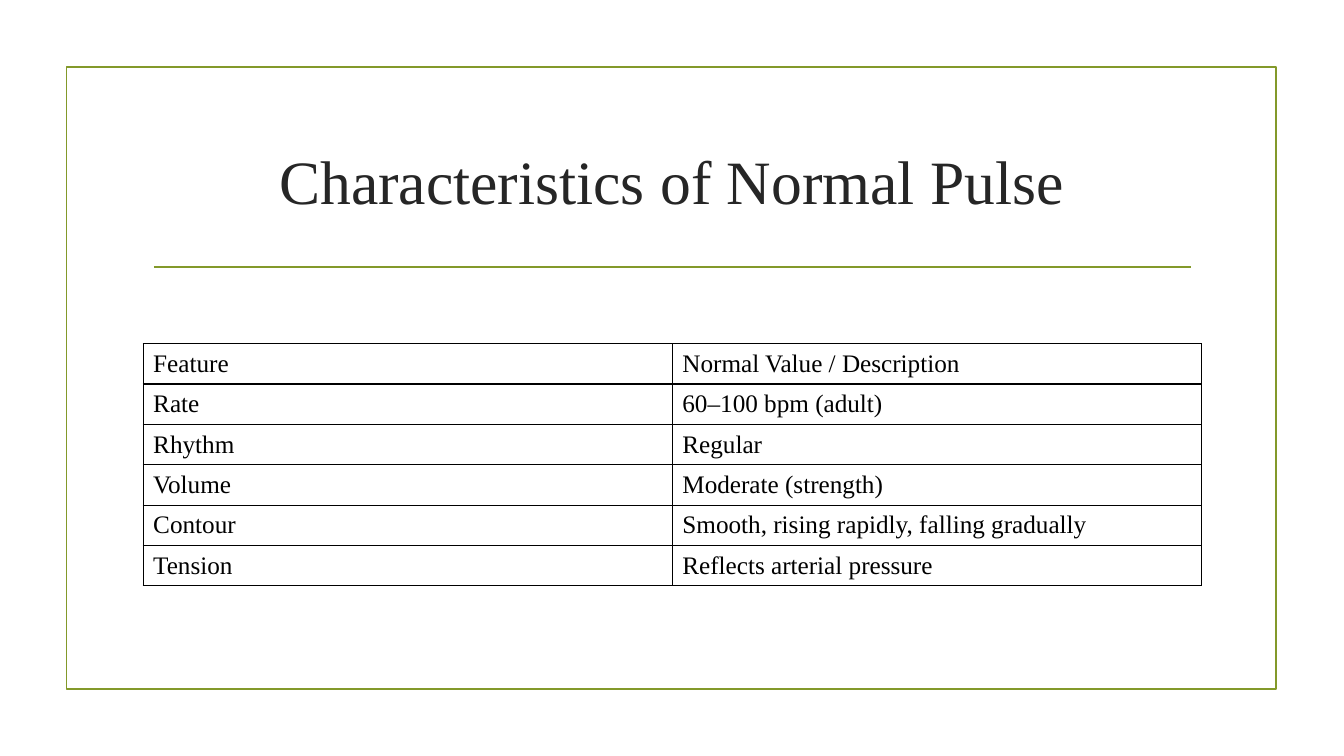
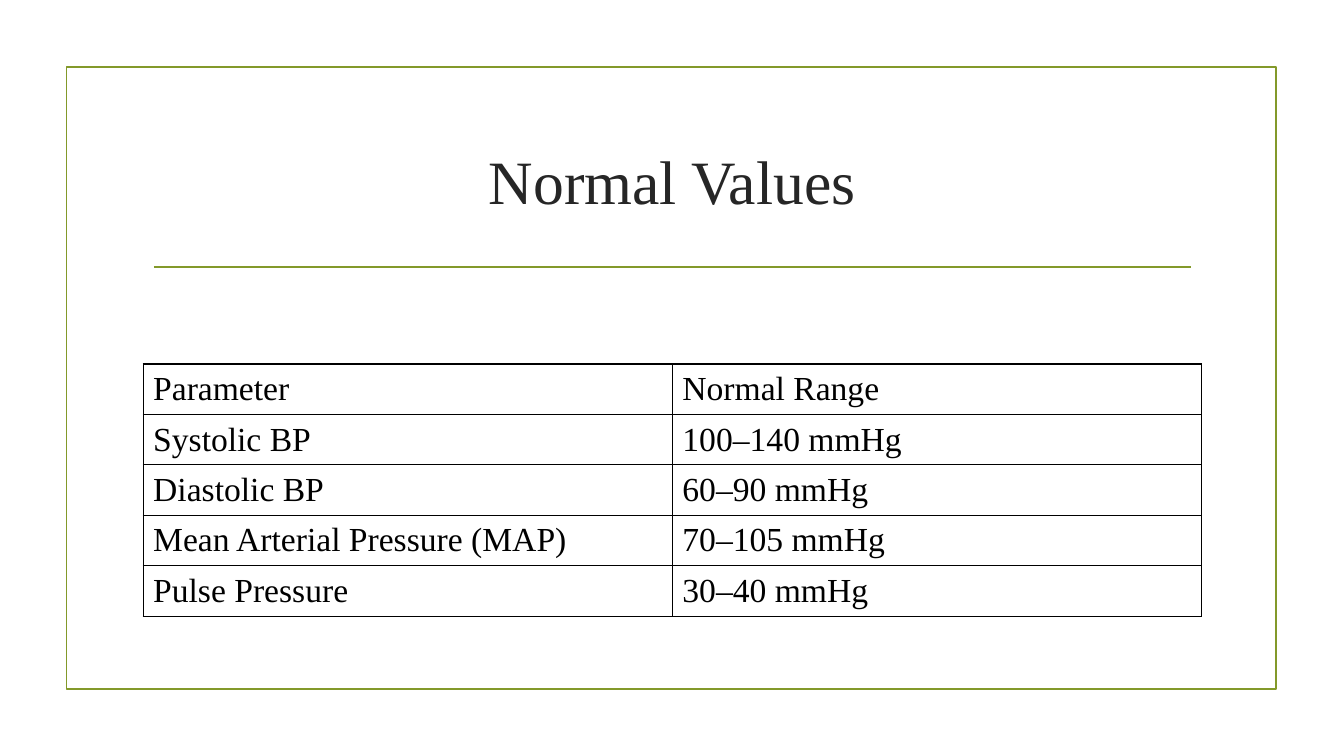
from dataclasses import dataclass

from lxml import etree
from pptx import Presentation
from pptx.dml.color import RGBColor
from pptx.enum.shapes import MSO_CONNECTOR, MSO_SHAPE
from pptx.enum.text import MSO_ANCHOR, PP_ALIGN
from pptx.oxml.ns import qn
from pptx.slide import Slide
from pptx.table import _Cell
from pptx.text.text import TextFrame
from pptx.util import Pt

RECTANGLE = MSO_SHAPE.RECTANGLE
STRAIGHT = MSO_CONNECTOR.STRAIGHT
MIDDLE = MSO_ANCHOR.MIDDLE
CENTER = PP_ALIGN.CENTER
LEFT = PP_ALIGN.LEFT

COLORS = {"accent": "83992A", "title": "262626", "ink": "000000", "paper": "FFFFFF"}
FONT = "Times New Roman"
BLANK_LAYOUT = 6
SLIDE_WIDTH, SLIDE_HEIGHT = 960, 540
CONTENT_LEFT, CONTENT_WIDTH = 102.24, 756
ACCENT_WEIGHT = 1.25
BORDER_WEIGHT = 1


@dataclass(frozen=True)
class ValuesSlide:
    title: str
    table_top: float
    row_height: float
    text_size: float
    rows: tuple[tuple[str, ...], ...]


SLIDES = (
    ValuesSlide(
        "Characteristics of Normal Pulse", 245.5, 27.2, 18,
        (
            ("Feature", "Normal Value / Description"),
            ("Rate", "60–100 bpm (adult)"),
            ("Rhythm", "Regular"),
            ("Volume", "Moderate (strength)"),
            ("Contour", "Smooth, rising rapidly, falling gradually"),
            ("Tension", "Reflects arterial pressure"),
        ),
    ),
    ValuesSlide(
        "Normal Values", 260, 33.85, 24,
        (
            ("Parameter", "Normal Range"),
            ("Systolic BP", "100–140 mmHg"),
            ("Diastolic BP", "60–90 mmHg"),
            ("Mean Arterial Pressure (MAP)", "70–105 mmHg"),
            ("Pulse Pressure", "30–40 mmHg"),
        ),
    ),
)


def rgb(name: str) -> RGBColor:
    return RGBColor.from_string(COLORS[name])


def write(frame: TextFrame, text: str, size: float, color: str, align: PP_ALIGN) -> None:
    paragraph = frame.paragraphs[0]
    paragraph.alignment = align
    run = paragraph.add_run()
    run.text = text
    run.font.name = FONT
    run.font.size = Pt(size)
    run.font.color.rgb = rgb(color)


def add_frame_and_rule(slide: Slide) -> None:
    background = slide.background.fill
    background.solid()
    background.fore_color.rgb = rgb("paper")
    border = slide.shapes.add_shape(RECTANGLE, Pt(47.5), Pt(48), Pt(864), Pt(444))
    border.shadow.inherit = False
    border.fill.background()
    rule = slide.shapes.add_connector(STRAIGHT, Pt(110), Pt(190.8), Pt(850.5), Pt(190.8))
    etree.SubElement(rule._element.spPr, qn("a:effectLst"))
    for outlined in (border, rule):
        outlined.line.color.rgb = rgb("accent")
        outlined.line.width = Pt(ACCENT_WEIGHT)


def add_title(slide: Slide, text: str) -> None:
    title = slide.shapes.add_textbox(Pt(CONTENT_LEFT), Pt(77), Pt(CONTENT_WIDTH), Pt(103))
    title.text_frame.word_wrap = True
    title.text_frame.vertical_anchor = MIDDLE
    write(title.text_frame, text, 44, "title", CENTER)


def add_borders(cell: _Cell) -> None:
    properties = cell._tc.get_or_add_tcPr()
    for position, side in enumerate(("lnL", "lnR", "lnT", "lnB")):
        edge = etree.Element(qn(f"a:{side}"), w=str(Pt(BORDER_WEIGHT)))
        fill = etree.SubElement(edge, qn("a:solidFill"))
        etree.SubElement(fill, qn("a:srgbClr"), val=COLORS["ink"])
        properties.insert(position, edge)


def add_values_table(slide: Slide, content: ValuesSlide) -> None:
    row_count, column_count = len(content.rows), len(content.rows[0])
    table = slide.shapes.add_table(
        row_count, column_count, Pt(CONTENT_LEFT), Pt(content.table_top),
        Pt(CONTENT_WIDTH), Pt(content.row_height * row_count),
    ).table
    table.first_row = False
    table.horz_banding = False
    for row, values in zip(table.rows, content.rows):
        row.height = Pt(content.row_height)
        for cell, value in zip(row.cells, values):
            cell.fill.background()
            cell.vertical_anchor = MIDDLE
            add_borders(cell)
            write(cell.text_frame, value, content.text_size, "ink", LEFT)


def main() -> None:
    presentation = Presentation()
    presentation.slide_width = Pt(SLIDE_WIDTH)
    presentation.slide_height = Pt(SLIDE_HEIGHT)
    for content in SLIDES:
        slide = presentation.slides.add_slide(presentation.slide_layouts[BLANK_LAYOUT])
        add_frame_and_rule(slide)
        add_title(slide, content.title)
        add_values_table(slide, content)
    presentation.save("out.pptx")


if __name__ == "__main__":
    main()
